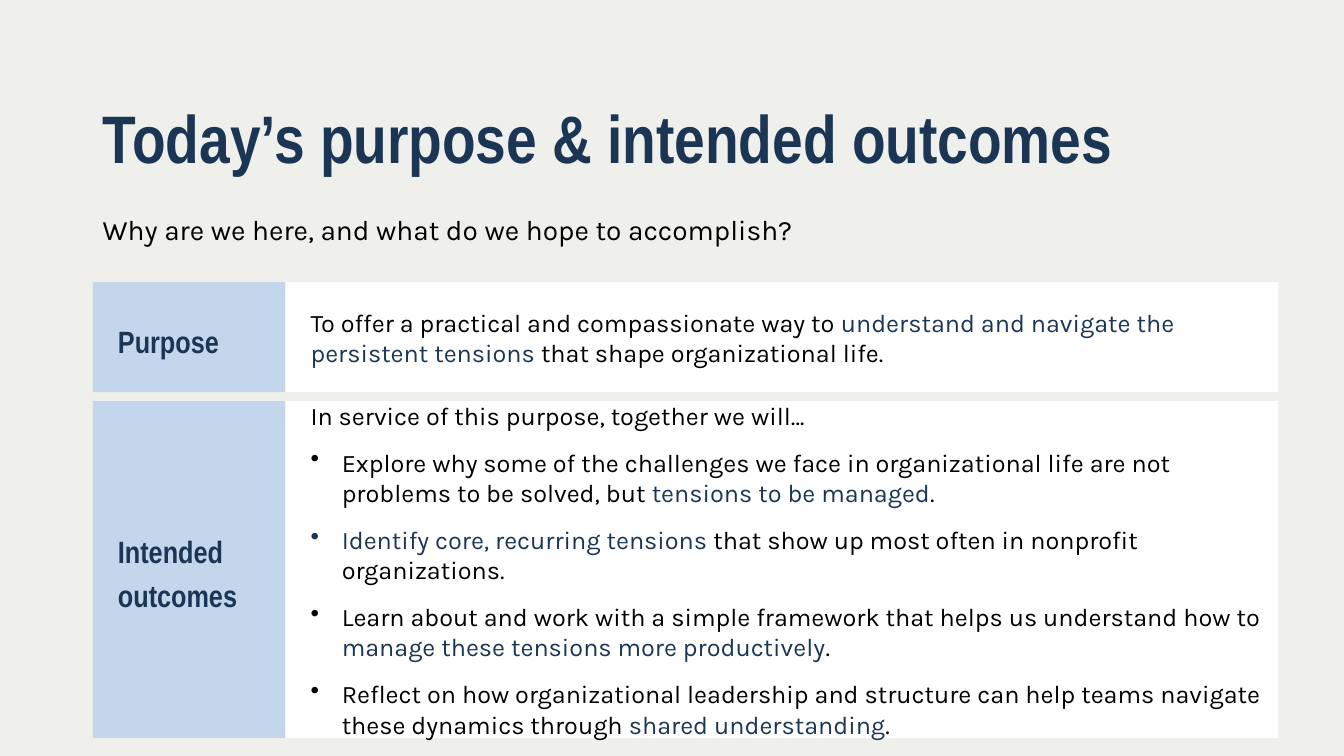
from pptx import Presentation
from pptx import util as u
from pptx.dml.color import RGBColor
from pptx.enum import shapes, text
from pptx.oxml import parse_xml
from pptx.oxml.ns import nsdecls

WIDTH, HEIGHT = 13.33, 7.5
NAVY, BLACK, WHITE, BLUE, PAPER = "1B3655", "000000", "FFFFFF", "C3D6EC", "EFEFEC"
HEADING, BODY = "Arial Narrow", "Karla"

# Grid: a label column, a content column and two rows
LEFT, SPLIT, RIGHT = 0.92, 2.83, 12.68
ROWS = {"purpose": (2.8, 1.09), "outcomes": (3.98, 3.34)}
INDENT = 0.31

# Asterisks enclose the highlighted words
PURPOSE = ["To offer a practical and compassionate way to *understand and navigate "
           "the persistent tensions* that shape organizational life."]
INTRO = "In service of this purpose, together we will…"
OUTCOMES = [
    "Explore why some of the challenges we face in organizational life are not "
    "problems to be solved, but *tensions to be managed*.",
    "*Identify core, recurring tensions *that show up most often in nonprofit organizations.",
    "Learn about and work with a simple framework that helps us understand how to "
    "*manage these tensions more productively*.",
    "Reflect on how organizational leadership and structure can help teams navigate "
    "these dynamics through *shared understanding*.",
]


def color(value):
    return RGBColor.from_string(value)


def set_frame(box, inset=0.1, anchor=text.MSO_ANCHOR.MIDDLE):
    frame = box.text_frame
    frame.word_wrap = True
    frame.vertical_anchor = anchor
    frame.margin_left, frame.margin_right = u.Inches(inset), u.Inches(0.1)
    frame.margin_top = frame.margin_bottom = u.Inches(0.05)
    return frame


def add_text_box(page, top, height, anchor):
    box = page.shapes.add_textbox(*map(u.Inches, (LEFT, top, 11.5, height)))
    return set_frame(box, anchor=anchor)


def add_cell(page, left, right, row, fill):
    top, height = ROWS[row]
    box = page.shapes.add_shape(shapes.MSO_SHAPE.RECTANGLE,
                                *map(u.Inches, (left, top, right - left, height)))
    box.shadow.inherit = False
    box.fill.solid()
    box.fill.fore_color.rgb = color(fill)
    box.line.fill.background()
    return set_frame(box, inset=0.25)


def style(para, font, size, before=0, after=0, spacing=1.0):
    para.alignment = text.PP_ALIGN.LEFT
    para.font.name, para.font.size = font, u.Pt(size)
    para.space_before, para.space_after = u.Pt(before), u.Pt(after)
    para.line_spacing = spacing


def write_line(frame, words, font, size, ink, bold=False, spacing=1.0):
    para = frame.paragraphs[0]
    para.text = words
    style(para, font, size, before=10, spacing=spacing)
    para.font.bold = bold
    para.font.color.rgb = color(ink)


def add_bullet(para):
    props = para._p.get_or_add_pPr()
    props.set("marL", str(u.Inches(INDENT)))
    props.set("indent", str(-u.Inches(INDENT)))
    bullet = parse_xml(f'<a:buChar {nsdecls("a")} char="•"/>')
    props.insert_element_before(bullet, "a:tabLst", "a:defRPr", "a:extLst")


def write_body(frame, lines, before=0, after=0, bullets_from=1):
    for index, line in enumerate(lines):
        para = frame.paragraphs[0] if index == 0 else frame.add_paragraph()
        style(para, BODY, 18, before, after)
        if index >= bullets_from:
            add_bullet(para)
        for part, words in enumerate(line.split("*")):
            if words:
                span = para.add_run()
                span.text = words
                span.font.color.rgb = color(NAVY if part % 2 else BLACK)


def main():
    deck = Presentation()
    deck.slide_width, deck.slide_height = u.Inches(WIDTH), u.Inches(HEIGHT)
    page = deck.slides.add_slide(deck.slide_layouts[6])
    page.background.fill.solid()
    page.background.fill.fore_color.rgb = color(PAPER)

    # Title and question
    title = add_text_box(page, 0.81, 1.09, text.MSO_ANCHOR.MIDDLE)
    write_line(title, "Today’s purpose & intended outcomes", HEADING, 48, NAVY, bold=True)
    question = add_text_box(page, 1.99, 0.52, text.MSO_ANCHOR.TOP)
    write_line(question, "Why are we here, and what do we hope to accomplish?",
               BODY, 20, BLACK, spacing=1.2)

    # Row labels
    for row, label in (("purpose", "Purpose"), ("outcomes", "Intended outcomes")):
        cell = add_cell(page, LEFT, SPLIT, row, BLUE)
        write_line(cell, label, HEADING, 22, NAVY, bold=True, spacing=1.2)

    # Row contents
    write_body(add_cell(page, SPLIT, RIGHT, "purpose", WHITE), PURPOSE, before=10)
    write_body(add_cell(page, SPLIT, RIGHT, "outcomes", WHITE), [INTRO, *OUTCOMES], after=12)

    deck.save("out.pptx")


if __name__ == "__main__":
    main()
